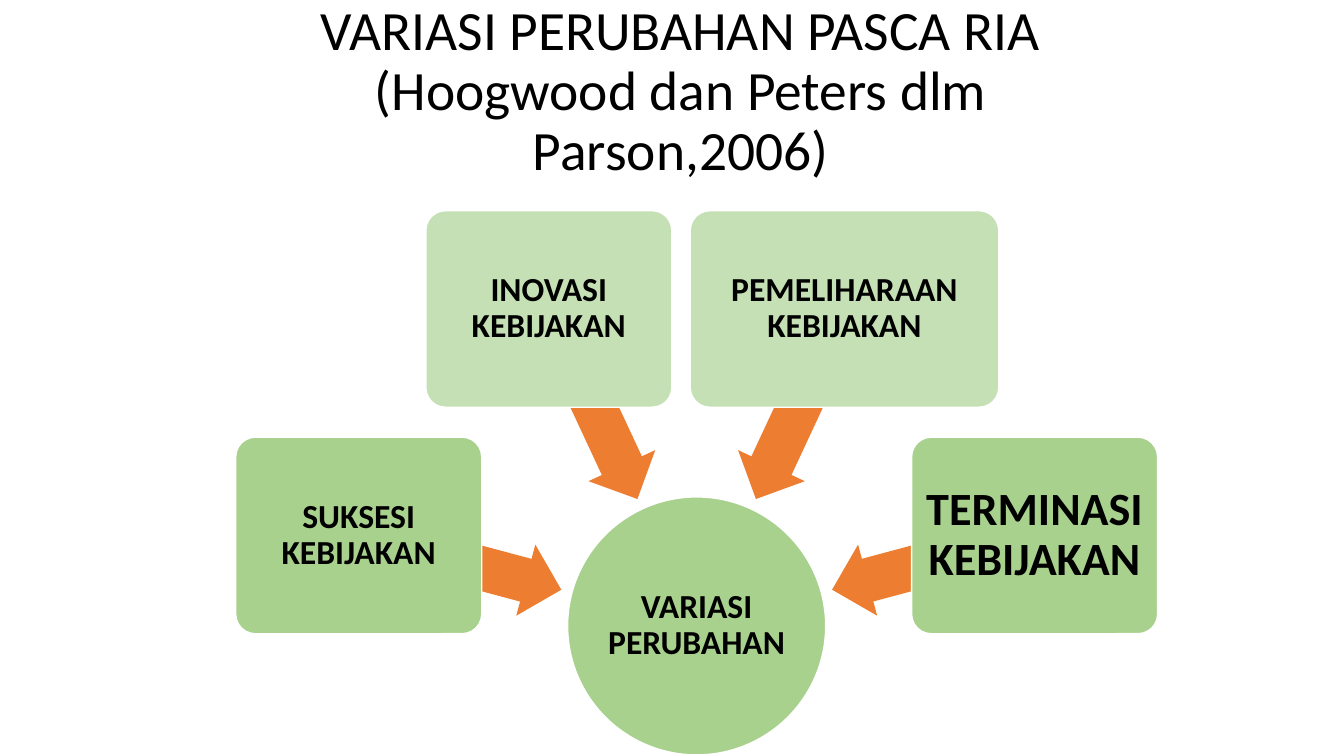
from dataclasses import dataclass
from math import cos, radians, sin

from pptx import Presentation
from pptx.dml.color import RGBColor
from pptx.enum.shapes import MSO_SHAPE
from pptx.enum.text import MSO_ANCHOR, MSO_AUTO_SIZE, PP_ALIGN
from pptx.util import Inches, Pt

OVAL = MSO_SHAPE.OVAL
ROUND = MSO_SHAPE.ROUNDED_RECTANGLE
ARROW = MSO_SHAPE.LEFT_ARROW
MIDDLE = MSO_ANCHOR.MIDDLE
CENTER = PP_ALIGN.CENTER
NO_FIT = MSO_AUTO_SIZE.NONE


@dataclass(frozen=True)
class Theme:
    font: str = "Calibri"
    ink: str = "000000"
    edge: str = "FFFFFF"
    green: str = "A9D18E"
    pale: str = "C5E0B4"
    orange: str = "ED7D31"
    title: float = 39.6
    label: float = 24
    large: float = 33


THEME = Theme()

# Radial layout: angles run clockwise from the right, in degrees
HUB = (6.91, 6.21)
HUB_SIZE = 2.56
BOX_REACH, ARROW_REACH = 3.47, 2.43
START, STEP = 195, 50
BOX_WIDE, BOX_HIGH = 2.44, 1.95

# Label, width, fill, type size, inset
BOXES = [
    ("SUKSESI KEBIJAKAN", BOX_WIDE, THEME.green, THEME.label, 0.05),
    ("INOVASI KEBIJAKAN", BOX_WIDE, THEME.pale, THEME.label, 0.05),
    ("PEMELIHARAAN KEBIJAKAN", 3.06, THEME.pale, THEME.label, 0.05),
    ("TERMINASI KEBIJAKAN", BOX_WIDE, THEME.green, THEME.large, 0.07),
]


def set_text(shape, text, size, bold, inset):
    frame = shape.text_frame
    frame.text = text
    frame.word_wrap = True
    frame.auto_size = NO_FIT
    frame.vertical_anchor = MIDDLE
    frame.margin_left = frame.margin_right = Inches(inset)
    frame.margin_top = frame.margin_bottom = Inches(min(inset, 0.07))
    para = frame.paragraphs[0]
    para.alignment = CENTER
    para.line_spacing = 0.9
    font = para.runs[0].font
    font.name = THEME.font
    font.size = Pt(size)
    font.bold = bold
    font.color.rgb = RGBColor.from_string(THEME.ink)


def add_title(slide, text):
    title = slide.shapes.title
    title.left, title.top = Inches(2.25), Inches(0)
    title.width, title.height = Inches(9), Inches(1.83)
    set_text(title, text, THEME.title, False, 0.1)


def add_form(slide, kind, center, wide, high, fill):
    left, top = center[0] - wide / 2, center[1] - high / 2
    form = slide.shapes.add_shape(
        kind, Inches(left), Inches(top), Inches(wide), Inches(high))
    form.shadow.inherit = False
    form.fill.solid()
    form.fill.fore_color.rgb = RGBColor.from_string(fill)
    form.line.fill.background()
    return form


def add_label(slide, kind, center, wide, high, fill, text, size, inset):
    form = add_form(slide, kind, center, wide, high, fill)
    form.line.color.rgb = RGBColor.from_string(THEME.edge)
    form.line.width = Pt(1)
    if kind == ROUND:
        form.adjustments[0] = 0.1
    set_text(form, text, size, True, inset)


def add_arrow(slide, center, angle):
    arrow = add_form(slide, ARROW, center, 2.08, 0.73, THEME.orange)
    arrow.adjustments[0] = 0.6
    arrow.adjustments[1] = 0.5
    arrow.rotation = angle


def orbit(angle, reach):
    turn = radians(angle)
    return HUB[0] + reach * cos(turn), HUB[1] + reach * sin(turn)


def main():
    deck = Presentation()
    deck.slide_width, deck.slide_height = Inches(13.33), Inches(7.5)
    slide = deck.slides.add_slide(deck.slide_layouts[5])
    add_title(slide, "VARIASI PERUBAHAN PASCA RIA "
                     "(Hoogwood dan Peters dlm Parson,2006)")

    # Hub
    add_label(slide, OVAL, HUB, HUB_SIZE, HUB_SIZE, THEME.green,
              "VARIASI PERUBAHAN", THEME.label, 0.02)

    # Each arrow lies under its box and points at the hub
    for i, (text, wide, fill, size, inset) in enumerate(BOXES):
        angle = START + i * STEP
        add_arrow(slide, orbit(angle, ARROW_REACH), angle)
        add_label(slide, ROUND, orbit(angle, BOX_REACH), wide, BOX_HIGH,
                  fill, text, size, inset)

    deck.save("out.pptx")


if __name__ == "__main__":
    main()
